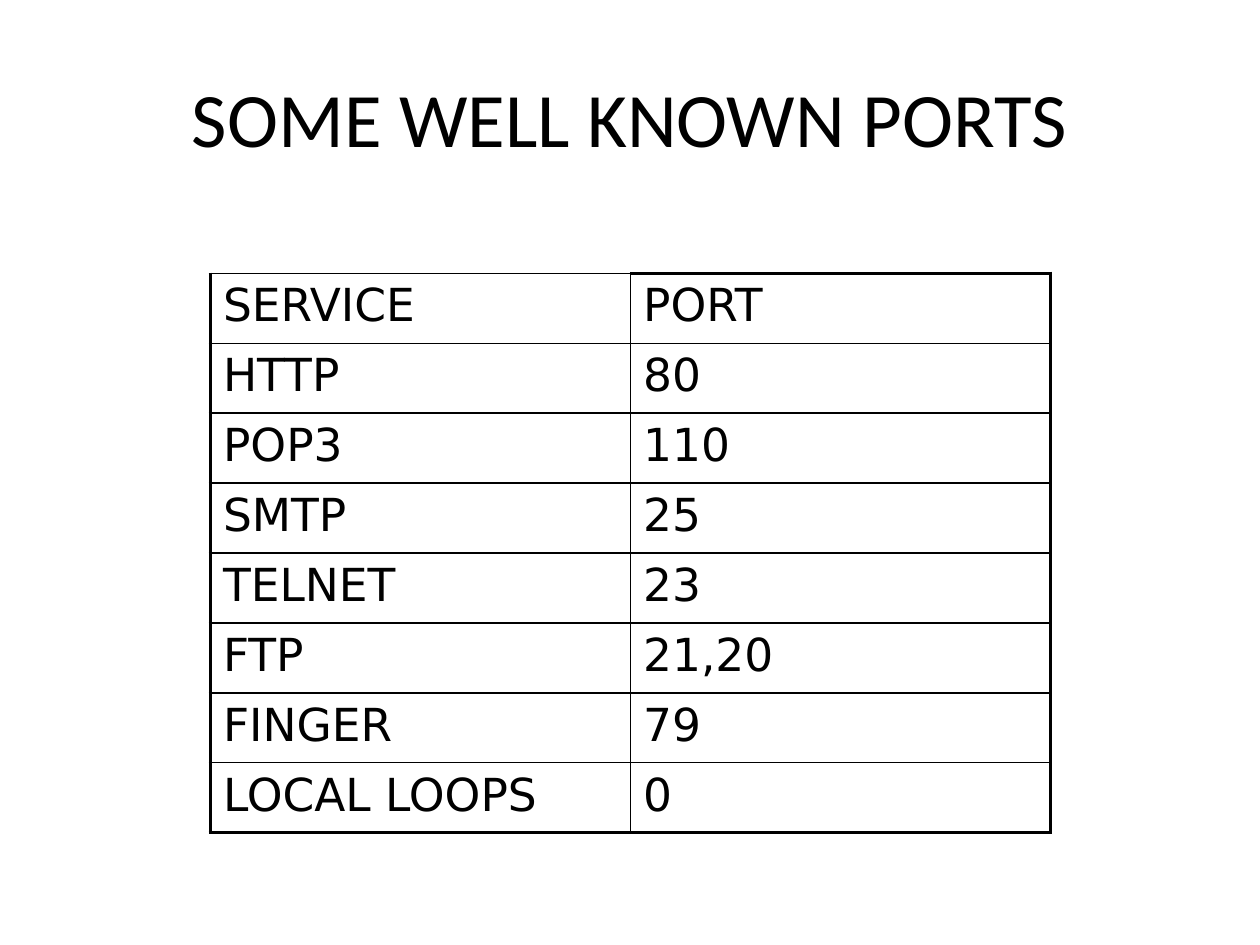
from lxml.etree import SubElement
from pptx import Presentation
from pptx.dml.color import RGBColor
from pptx.enum.text import MSO_ANCHOR, PP_ALIGN
from pptx.oxml.ns import qn
from pptx.util import Inches, Pt

BLACK = RGBColor(0x00, 0x00, 0x00)
THIN = Pt(1)
THICK = Pt(2.25)
TITLE_FONT = {"name": "Calibri", "size": Pt(44)}
CELL_FONT = {"name": "DejaVu Sans", "size": Pt(26)}
PORTS = [
    ("SERVICE", "PORT"),
    ("HTTP", "80"),
    ("POP3", "110"),
    ("SMTP", "25"),
    ("TELNET", "23"),
    ("FTP", "21,20"),
    ("FINGER", "79"),
    ("LOCAL LOOPS", "0"),
]


class PageBuilder:
    def __init__(self, page, color):
        self.page = page
        self.color = color

    def add_text(self, para, text, font):
        span = para.add_run()
        span.text = text
        for name, value in font.items():
            setattr(span.font, name, value)
        span.font.color.rgb = self.color

    def title(self, text, left, top, width, height):
        box = self.page.shapes.add_textbox(
            Inches(left), Inches(top), Inches(width), Inches(height)
        )
        frame = box.text_frame
        frame.word_wrap = True
        frame.vertical_anchor = MSO_ANCHOR.MIDDLE
        para = frame.paragraphs[0]
        para.alignment = PP_ALIGN.CENTER
        self.add_text(para, text, TITLE_FONT)

    def border(self, cell, widths):
        properties = cell._tc.get_or_add_tcPr()
        for position, (side, width) in enumerate(widths.items()):
            line = SubElement(properties, qn(f"a:ln{side}"), w=str(width))
            fill = SubElement(line, qn("a:solidFill"))
            SubElement(fill, qn("a:srgbClr"), val=str(self.color))
            properties.insert(position, line)

    def table(self, rows, left, top, width, height):
        last_row = len(rows) - 1
        last_column = len(rows[0]) - 1
        table = self.page.shapes.add_table(
            len(rows), len(rows[0]),
            Inches(left), Inches(top), Inches(width), Inches(height),
        ).table
        table.first_row = False
        table.horz_banding = False
        for row, values in enumerate(rows):
            for column, text in enumerate(values):
                cell = table.cell(row, column)
                cell.fill.background()
                self.add_text(cell.text_frame.paragraphs[0], text, CELL_FONT)
                at_right = column == last_column
                self.border(cell, {
                    "L": THICK if column == 0 else THIN,
                    "R": THICK if at_right else THIN,
                    "T": THICK if row == 0 and at_right else THIN,
                    "B": THICK if row == last_row else THIN,
                })


def main():
    deck = Presentation()
    deck.slide_width = Inches(10)
    deck.slide_height = Inches(7.5)
    builder = PageBuilder(deck.slides.add_slide(deck.slide_layouts[6]), BLACK)
    builder.title("SOME WELL KNOWN PORTS", 0.5, 0.3, 9, 1.25)
    builder.table(PORTS, 1.67, 2.17, 6.67, 4.44)
    deck.save("out.pptx")


if __name__ == "__main__":
    main()
